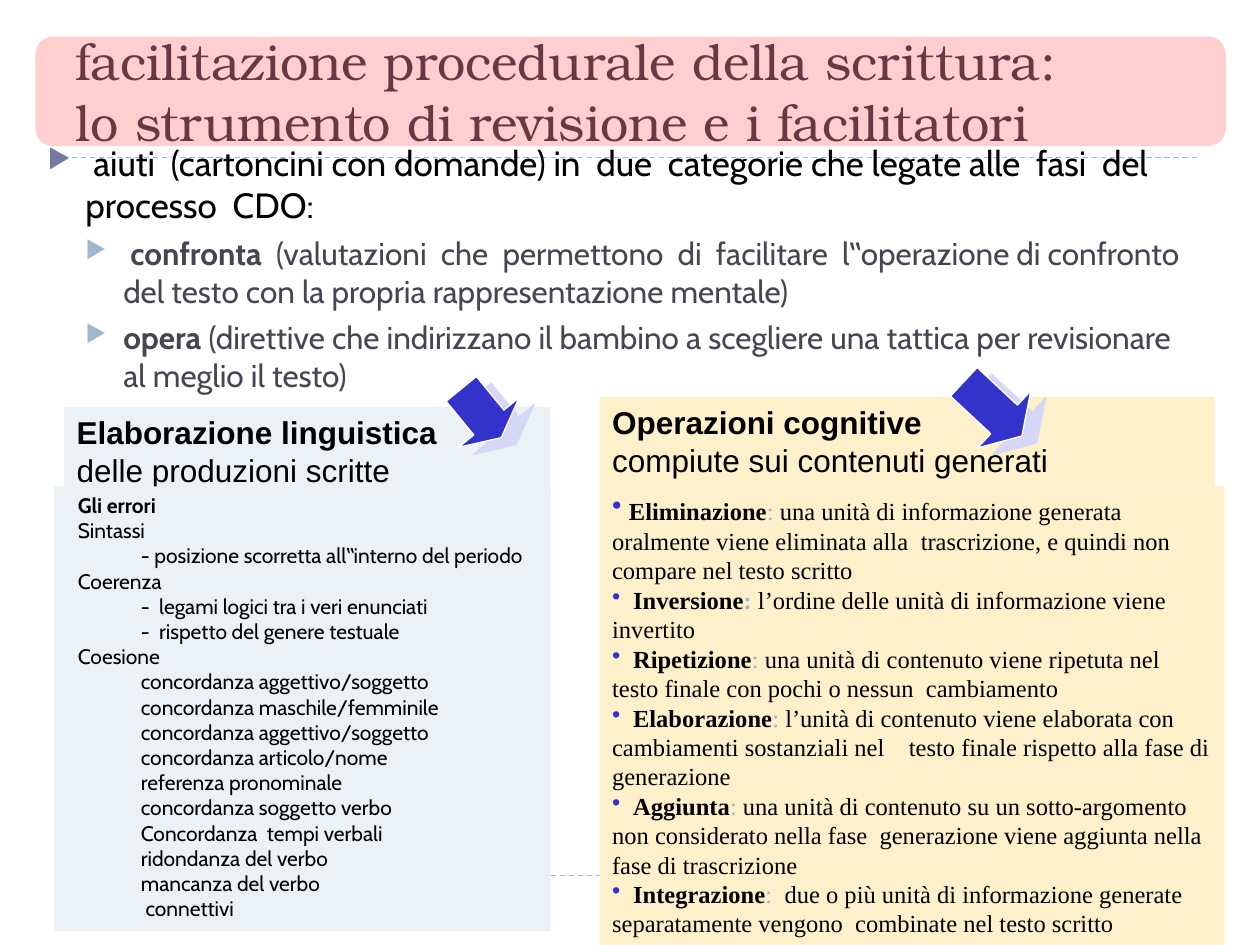
"""Build a slide on procedural facilitation of writing and its revision aids."""
from dataclasses import dataclass

from lxml import etree
from pptx import Presentation
from pptx.dml.color import RGBColor
from pptx.enum.dml import MSO_LINE
from pptx.enum.shapes import MSO_CONNECTOR, MSO_SHAPE
from pptx.enum.text import MSO_ANCHOR, MSO_AUTO_SIZE, PP_ALIGN
from pptx.oxml.ns import qn
from pptx.util import Inches, Pt

STRAIGHT = MSO_CONNECTOR.STRAIGHT
RECTANGLE, ROUNDED, ARROW = MSO_SHAPE.RECTANGLE, MSO_SHAPE.ROUNDED_RECTANGLE, MSO_SHAPE.DOWN_ARROW
LEFT, TOP, BOTTOM = PP_ALIGN.LEFT, MSO_ANCHOR.TOP, MSO_ANCHOR.BOTTOM
GROW, FIXED = MSO_AUTO_SIZE.SHAPE_TO_FIT_TEXT, MSO_AUTO_SIZE.NONE


@dataclass(frozen=True)
class Theme:
    ink: str = "000000"
    slate: str = "464653"
    sky: str = "9FB8CD"
    indigo: str = "727CA3"
    blue: str = "3333CC"
    shade: str = "D6D6F5"
    red: str = "FF0000"
    white: str = "FFFFFF"
    mist: str = "ECF1F5"
    cream: str = "FDF0CA"
    serif: str = "TeX Gyre Bonum"
    sans: str = "Cabin"
    heading: str = "Arial"
    reading: str = "Times New Roman"
    title_size: float = 28.8
    lead_size: int = 20
    head_size: int = 18
    reading_size: int = 14
    list_size: int = 12


def next_para(frame, left=0, hanging=0, level=0, before=0, bullet=None, color=None, share=100, tabs=()):
    para = frame.add_paragraph() if frame.paragraphs[0].runs else frame.paragraphs[0]
    para.alignment, para.level, para.space_before = LEFT, level, Pt(before)
    props = para._p.get_or_add_pPr()
    props.set("marL", str(Inches(left)))
    props.set("indent", str(-Inches(hanging)))
    if bullet:
        tint = etree.SubElement(props, qn("a:buClr"))
        etree.SubElement(tint, qn("a:srgbClr"), val=color)
        etree.SubElement(props, qn("a:buSzPct"), val=str(share * 1000))
        etree.SubElement(props, qn("a:buChar"), char=bullet)
    if tabs:
        stops = etree.SubElement(props, qn("a:tabLst"))
        for stop in tabs:
            etree.SubElement(stops, qn("a:tab"), pos=str(Inches(stop)), algn="l")
    return para


def add_span(para, text, size, font, color, bold=False):
    span = para.add_run()
    span.text = text
    span.font.size, span.font.name, span.font.bold = Pt(size), font, bold
    span.font.color.rgb = RGBColor.from_string(color)


theme = Theme()
deck = Presentation()
deck.slide_width, deck.slide_height = Inches(10), Inches(7.5)
column, row = deck.slide_width / 100, deck.slide_height / 75
page = deck.slides.add_slide(deck.slide_layouts[5])

for level in (69.5, 12.5):
    rule = page.shapes.add_connector(
        STRAIGHT, int(5 * column), int(level * row), int(95 * column), int(level * row))
    rule.line.color.rgb = RGBColor.from_string(theme.sky)
    rule.line.width, rule.line.dash_style = Pt(0.75), MSO_LINE.DASH
    etree.SubElement(rule.element.spPr, qn("a:effectLst"))

title = page.shapes.title
title.left, title.top = int(5 * column), int(1.7 * row)
title.width, title.height = int(90 * column), int(10.8 * row)
title.text_frame.vertical_anchor = BOTTOM
title.text_frame.auto_size, title.text_frame.word_wrap = FIXED, True
para = next_para(title.text_frame)
add_span(para, "facilitazione procedurale della scrittura:", theme.title_size, theme.serif, theme.slate)
para.add_line_break()
add_span(para, "lo strumento di revisione e i facilitatori", theme.title_size, theme.serif, theme.slate)

body = page.shapes.add_textbox(int(2.8 * column), int(10.7 * row), int(92.2 * column), int(54 * row))
body.text_frame.word_wrap = True
para = next_para(body.text_frame, 0.3, 0.3, 0, 6, "▶", theme.indigo, 76)
add_span(para, " aiuti  (cartoncini con domande) in  due  categorie che legate alle  fasi  del  processo  CDO:",
         theme.lead_size, theme.sans, theme.ink)
aids = [
    [(" ", False), ("confronta", True),
     ("  (valutazioni  che  permettono  di  facilitare  l‟operazione di confronto del testo "
      "con la propria rappresentazione mentale)", False)],
    [("opera", True),
     (" (direttive che indirizzano il bambino a scegliere una tattica per revisionare "
      "al meglio il testo)", False)],
]
for aid in aids:
    para = next_para(body.text_frame, 0.6, 0.3, 1, 5, "▶", theme.sky, 76)
    for text, bold in aid:
        add_span(para, text, theme.head_size, theme.sans, theme.slate, bold)

banner = page.shapes.add_shape(ROUNDED, int(2.8 * column), int(2.9 * row), int(94.5 * column), int(8.7 * row))
banner.shadow.inherit = False
banner.fill.solid()
banner.fill.fore_color.rgb = RGBColor.from_string(theme.red)
banner.line.fill.background()
etree.SubElement(banner.element.spPr.find(".//" + qn("a:srgbClr")), qn("a:alpha"), val="19000")

panels = [
    ("language head", 5.1, 32.3, 38.6, 7.1, theme.mist),
    ("operations head", 47.6, 31.5, 48.8, 7.1, theme.cream),
    ("operations", 47.6, 38.6, 49.6, 36.7, theme.cream),
    ("language", 4.3, 38.6, 39.4, 35.3, theme.mist),
]
frames = {}
for name, left, top, width, height, color in panels:
    panel = page.shapes.add_shape(
        RECTANGLE, int(left * column), int(top * row), int(width * column), int(height * row))
    panel.shadow.inherit = False
    panel.fill.solid()
    panel.fill.fore_color.rgb = RGBColor.from_string(color)
    panel.line.fill.background()
    frame = frames[name] = panel.text_frame
    frame.word_wrap, frame.auto_size, frame.vertical_anchor = True, GROW, TOP

headings = {
    "language head": ("Elaborazione linguistica", "delle produzioni scritte"),
    "operations head": ("Operazioni cognitive", "compiute sui contenuti generati"),
}
for name, lines in headings.items():
    for text, bold in zip(lines, (True, False)):
        para = next_para(frames[name], tabs=[0.49 * stop for stop in range(8)])
        add_span(para, text, theme.head_size, theme.heading, theme.ink, bold)

operations = [
    (" ", "Eliminazione", ": ", "una unità di informazione generata oralmente viene eliminata alla "
     "\ttrascrizione, e quindi non compare nel testo scritto"),
    ("  ", "Inversione", ": ", "l’ordine delle unità di informazione viene invertito"),
    ("  ", "Ripetizione", ": ", "una unità di contenuto viene ripetuta nel testo finale "
     "con pochi o nessun  cambiamento"),
    ("  ", "Elaborazione", ": ", "l’unità di contenuto viene elaborata con cambiamenti sostanziali nel    "
     "testo finale rispetto alla fase di generazione"),
    ("  ", "Aggiunta", ": ", "una unità di contenuto su un sotto-argomento non considerato nella fase  "
     "generazione viene aggiunta nella fase di trascrizione"),
    ("  ", "Integrazione", ":  ", "due o più unità di informazione generate separatamente vengono  "
     "combinate nel testo scritto"),
]
for gap, name, colon, meaning in operations:
    para = next_para(frames["operations"], bullet="•", color=theme.blue,
                     tabs=[0.49 * stop for stop in range(1, 9)])
    gap_size = 16 if name == "Eliminazione" else theme.reading_size
    add_span(para, gap, gap_size, theme.reading, theme.red)
    add_span(para, name, theme.reading_size, theme.reading, theme.ink, True)
    add_span(para, colon, theme.reading_size, theme.reading, theme.sky, name == "Inversione")
    add_span(para, meaning, theme.reading_size, theme.reading, theme.ink)

errors = {
    "Gli errori": [],
    "Sintassi": ["- posizione scorretta all‟interno del periodo"],
    "Coerenza": ["-  legami logici tra i veri enunciati", "-  rispetto del genere testuale"],
    "Coesione": [
        "concordanza aggettivo/soggetto", "concordanza maschile/femminile",
        "concordanza aggettivo/soggetto", "concordanza articolo/nome", "referenza pronominale",
        "concordanza soggetto verbo", "Concordanza  tempi verbali", "ridondanza del verbo",
        "mancanza del verbo", " connettivi"],
}
for group, items in errors.items():
    para = next_para(frames["language"], 0.09, level=1)
    add_span(para, group, theme.list_size, theme.sans, theme.ink, group == "Gli errori")
    for item in items:
        para = next_para(frames["language"], 0.59, level=3)
        add_span(para, item, theme.list_size, theme.sans, theme.ink)

for left, top, height, angle in ((75.7, 29.3, 6.3, 313), (35.1, 30.3, 5, 320.6)):
    arrow = page.shapes.add_shape(ARROW, int(left * column), int(top * row), int(6.2 * column), int(height * row))
    arrow.rotation = angle
    arrow.adjustments[0], arrow.adjustments[1] = 0.5, 0.31
    arrow.fill.solid()
    arrow.fill.fore_color.rgb = RGBColor.from_string(theme.blue)
    arrow.line.color.rgb = RGBColor.from_string(theme.white)
    arrow.line.width = Pt(0.75)
    arrow.shadow.inherit = False
    shadow = etree.SubElement(arrow.element.spPr.find(qn("a:effectLst")), qn("a:outerShdw"),
                              dist=str(Pt(9.4)), dir=str(25 * 60000), algn="ctr", rotWithShape="0")
    etree.SubElement(shadow, qn("a:srgbClr"), val=theme.shade)

deck.save("out.pptx")
